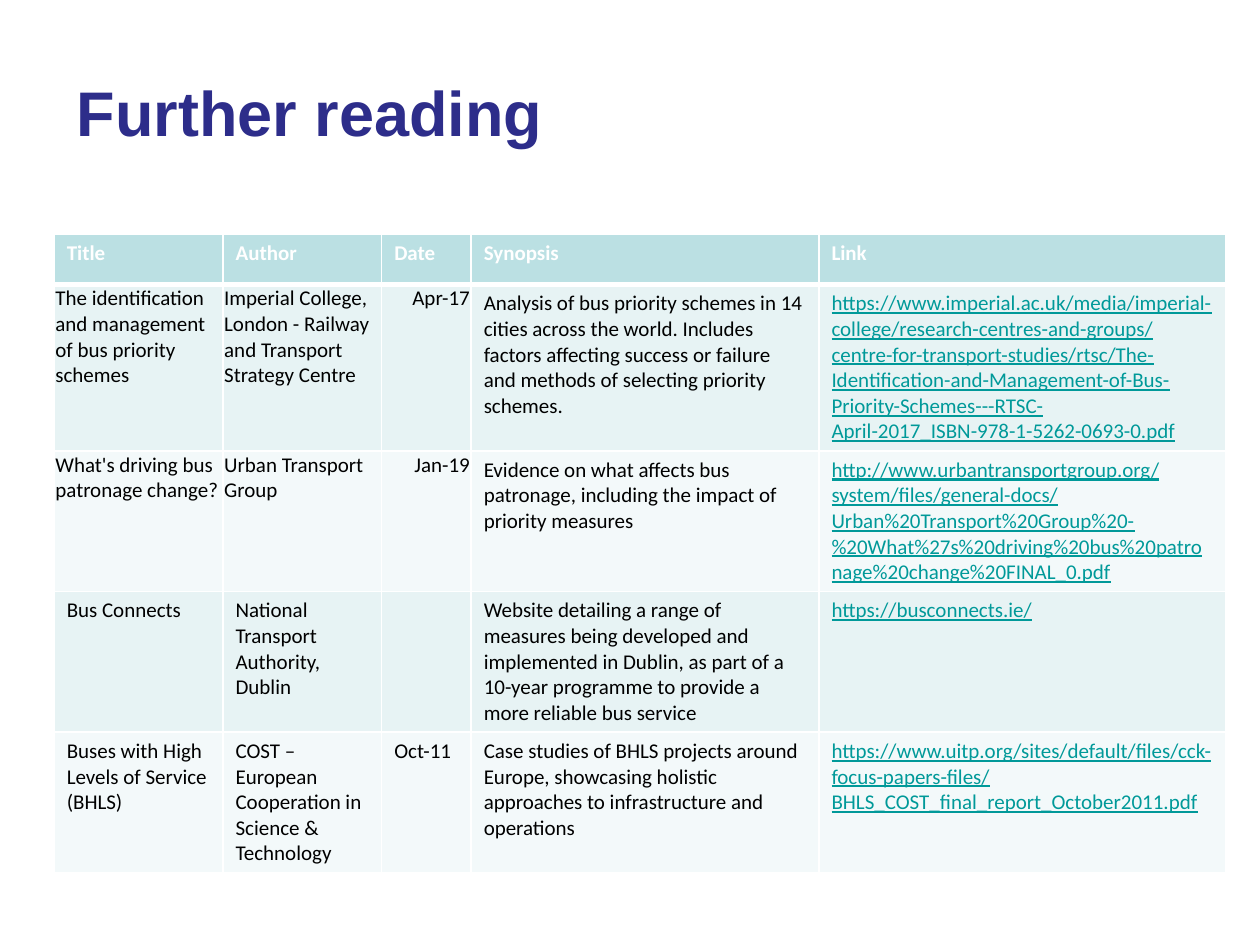
from lxml import etree
from pptx import Presentation
from pptx.dml.color import RGBColor
from pptx.enum.text import MSO_ANCHOR, PP_ALIGN
from pptx.oxml.ns import qn
from pptx.util import Inches, Pt

LEFT, RIGHT = PP_ALIGN.LEFT, PP_ALIGN.RIGHT
MIDDLE = MSO_ANCHOR.MIDDLE
TITLE_ONLY = 5
GRID_COLUMNS, GRID_ROWS = 100, 75

HEADINGS = ["Title", "Author", "Date", "Synopsis", "Link"]
COLUMN_SPANS = [13.4, 12.6, 7.1, 27.6, 32.3]
ROW_SPANS = [4, 10.1, 10.1, 10.1, 10.1]
DATE, LINK = HEADINGS.index("Date"), HEADINGS.index("Link")
TIGHT_ROWS = (1, 2)

READINGS = [
    ["The identification and management of bus priority schemes",
     "Imperial College, London - Railway and Transport Strategy Centre",
     "Apr-17",
     "Analysis of bus priority schemes in 14 cities across the world. Includes factors "
     "affecting success or failure and methods of selecting priority schemes.",
     "https://www.imperial.ac.uk/media/imperial-college/research-centres-and-groups/"
     "centre-for-transport-studies/rtsc/The-Identification-and-Management-of-Bus-"
     "Priority-Schemes---RTSC-April-2017_ISBN-978-1-5262-0693-0.pdf"],
    ["What's driving bus patronage change?",
     "Urban Transport Group",
     "Jan-19",
     "Evidence on what affects bus patronage, including the impact of priority measures",
     "http://www.urbantransportgroup.org/system/files/general-docs/"
     "Urban%20Transport%20Group%20-%20What%27s%20driving%20bus%20patronage%20change"
     "%20FINAL_0.pdf"],
    ["Bus Connects",
     "National Transport Authority, Dublin",
     "",
     "Website detailing a range of measures being developed and implemented in Dublin, "
     "as part of a 10-year programme to provide a more reliable bus service",
     "https://busconnects.ie/"],
    ["Buses with High Levels of Service (BHLS)",
     "COST – European Cooperation in Science & Technology",
     "Oct-11",
     "Case studies of BHLS projects around Europe, showcasing holistic approaches to "
     "infrastructure and operations",
     "https://www.uitp.org/sites/default/files/cck-focus-papers-files/"
     "BHLS_COST_final_report_October2011.pdf"],
]


def colour(value):
    return RGBColor.from_string(value)


class ReadingSlide:
    title_font, table_font = "Arial", "Calibri"
    title_size, table_size = 36, 12
    navy, teal, white, black = "2D2D8A", "009999", "FFFFFF", "000000"
    header_fill = "BBE0E3"
    band_fills = ["E7F3F4", "F3F9FA"]

    def __init__(self, presentation):
        self.column = presentation.slide_width / GRID_COLUMNS
        self.row = presentation.slide_height / GRID_ROWS
        self.slide = presentation.slides.add_slide(presentation.slide_layouts[TITLE_ONLY])

    def place(self, left, top, width, height):
        return (round(left * self.column), round(top * self.row),
                round(width * self.column), round(height * self.row))

    def format_font(self, font, name, size, ink, bold=False, underline=False):
        font.name, font.size = name, Pt(size)
        font.bold, font.underline = bold, underline
        font.color.rgb = colour(ink)

    def title(self, text, *box):
        heading = self.slide.shapes.title
        heading.left, heading.top, heading.width, heading.height = self.place(*box)
        heading.text_frame.text = text
        heading.text_frame.vertical_anchor = MIDDLE
        paragraph = heading.text_frame.paragraphs[0]
        paragraph.alignment = LEFT
        self.format_font(paragraph.runs[0].font, self.title_font, self.title_size,
                         self.navy, bold=True)

    def borders(self, cell, widths):
        properties = cell._tc.get_or_add_tcPr()
        for side, width in widths.items():
            line = etree.SubElement(properties, qn(f"a:ln{side}"), w=str(Pt(width)))
            fill = etree.SubElement(line, qn("a:solidFill"))
            etree.SubElement(fill, qn("a:srgbClr"), val=self.white)

    def cell(self, cell, text, row, column):
        header = row == 0
        link = column == LINK and not header
        self.borders(cell, {"L": 1, "R": 1, "T": 3 if row == 1 else 1,
                            "B": 3 if header else 1})
        cell.fill.solid()
        cell.fill.fore_color.rgb = colour(
            self.header_fill if header else self.band_fills[(row - 1) % 2])
        cell.text_frame.text = text
        paragraph = cell.text_frame.paragraphs[0]
        ink = self.white if header else self.teal if link else self.black
        for font in [paragraph.font] + [run.font for run in paragraph.runs]:
            self.format_font(font, self.table_font, self.table_size, ink, header, link)
        if row in TIGHT_ROWS and column <= DATE:
            cell.margin_left = cell.margin_right = cell.margin_top = Inches(0.01)
            cell.margin_bottom = 0
            paragraph.alignment = RIGHT if column == DATE else LEFT

    def table(self, records, left, top, width, height):
        frame = self.slide.shapes.add_table(len(records), len(COLUMN_SPANS),
                                            *self.place(left, top, width, height))
        grid = frame.table
        for column, span in zip(grid.columns, COLUMN_SPANS):
            column.width = round(span * self.column)
        for row, span in zip(grid.rows, ROW_SPANS):
            row.height = round(span * self.row)
        frame.height = round(height * self.row)
        for row, record in enumerate(records):
            for column, text in enumerate(record):
                self.cell(grid.cell(row, column), text, row, column)


def main():
    presentation = Presentation()
    presentation.slide_width, presentation.slide_height = Inches(10), Inches(7.5)
    page = ReadingSlide(presentation)
    page.title("Further reading", 5.1, 5.2, 85, 7.2)
    page.table([HEADINGS] + READINGS, 4.3, 18.6, sum(COLUMN_SPANS), 52)
    presentation.save("out.pptx")


if __name__ == "__main__":
    main()
